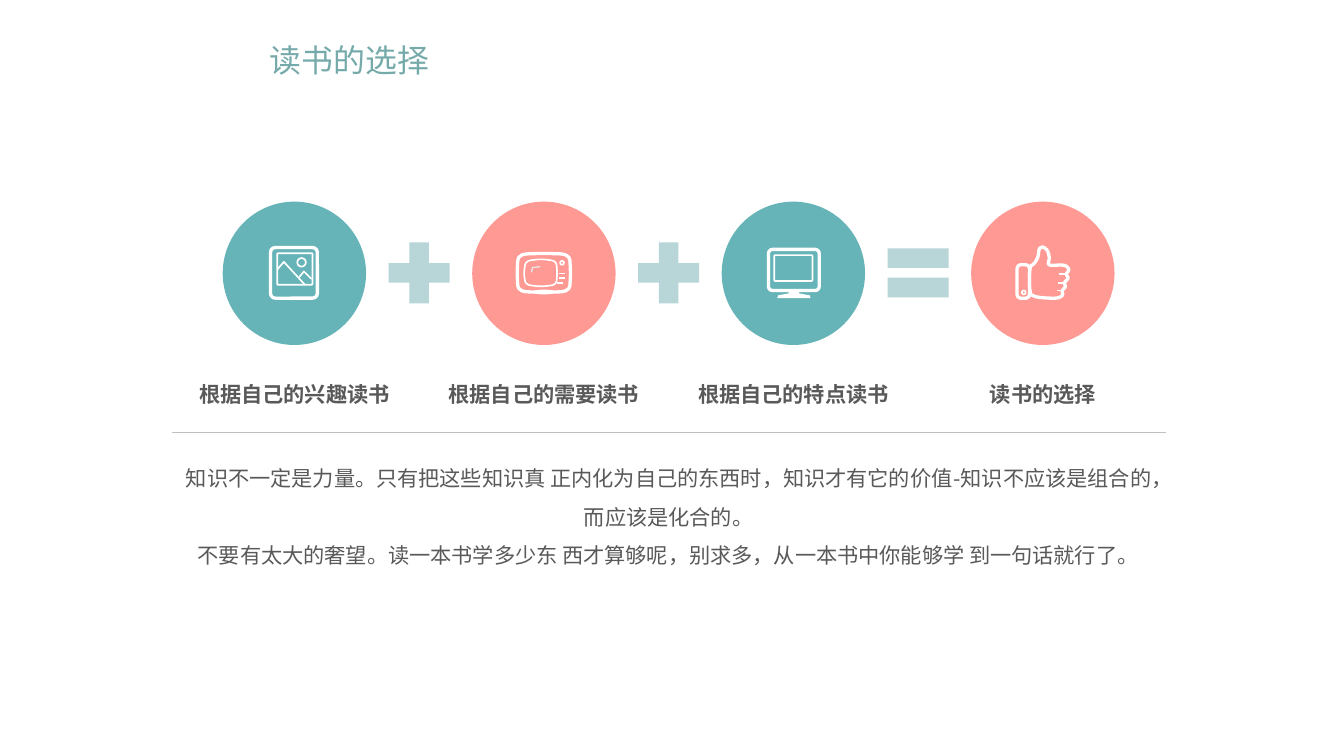
from pptx import Presentation
from pptx.dml.color import RGBColor
from pptx.enum import shapes as sh, text as tx
from pptx.oxml.ns import qn
from pptx.util import Inches, Pt
from lxml import etree

FONT = "Noto Sans CJK SC"
COLORS = {"title": "76AAAA", "teal": "66B4B8", "coral": "FF9993",
          "operator": "B8D6D8", "icon": "FFFFFF", "glint": "E7E6E6",
          "text": "595959", "rule": "BFBFBF"}
PITCH, FIRST_CENTER, CENTER_Y, CIRCLE = 2.61, 3.08, 2.86, 1.5
BOLD_STROKE, FINE_STROKE = 2.5, 1.25

TV_BODY = [(-.27, -.2), (0, -.21), (.27, -.2), (.28, 0),
           (.27, .19), (0, .2), (-.27, .19), (-.28, 0)]
TV_SCREEN = [(-.19, -.13), (-.03, -.15), (.13, -.13), (.14, 0),
             (.13, .12), (-.03, .14), (-.19, .12), (-.21, 0)]
MONITOR_STAND = [(-.05, .18), (.06, .18), (.06, .21), (.17, .23),
                 (.18, .26), (-.17, .26), (-.16, .23), (-.05, .21)]
HAND = [(-.14, -.07), (-.09, -.1), (-.05, -.17), (-.04, -.26), (0, -.28),
        (.05, -.24), (.07, -.16), (.05, -.08), (.23, -.09), (.28, -.04),
        (.24, .01), (.27, .05), (.22, .1), (.24, .14), (.2, .18),
        (.21, .23), (.16, .26), (.05, .26), (-.06, .25), (-.14, .22)]


def rgb(name):
    return RGBColor.from_string(COLORS[name])


def paint(shape, fill=None, stroke=None, weight=FINE_STROKE):
    shape.shadow.inherit = False
    if fill:
        shape.fill.solid()
        shape.fill.fore_color.rgb = rgb(fill)
    else:
        shape.fill.background()
    if stroke:
        shape.line.color.rgb = rgb(stroke)
        shape.line.width = Pt(weight)
    else:
        shape.line.fill.background()
    return shape


def add_preset(slide, kind, left, top, width, height, **style):
    shape = slide.shapes.add_shape(
        kind, Inches(left), Inches(top), Inches(width), Inches(height))
    return paint(shape, **style)


def add_frame(slide, left, top, width, height, radius, weight):
    frame = add_preset(slide, sh.MSO_SHAPE.ROUNDED_RECTANGLE, left, top, width,
                       height, stroke="icon", weight=weight)
    frame.adjustments[0] = radius / min(width, height)


def add_outline(slide, center, offsets, closed=True, **style):
    points = [(Inches(center + x), Inches(CENTER_Y + y)) for x, y in offsets]
    builder = slide.shapes.build_freeform(*points[0], scale=1.0)
    builder.add_line_segments(points[1:], close=closed)
    paint(builder.convert_to_shape(), **style)


def soften(points, rounds=2):
    """Cut the corners of a closed outline until it reads as a curve."""
    for _ in range(rounds):
        points = [(a[0] + (b[0] - a[0]) * t, a[1] + (b[1] - a[1]) * t)
                  for a, b in zip(points, points[1:] + points[:1])
                  for t in (.2, .8)]
    return points


def add_line(slide, x1, y1, x2, y2, color, weight):
    line = slide.shapes.add_connector(
        sh.MSO_CONNECTOR.STRAIGHT, Inches(x1), Inches(y1), Inches(x2), Inches(y2))
    line.line.color.rgb = rgb(color)
    line.line.width = Pt(weight)
    etree.SubElement(line._element.spPr, qn("a:effectLst"))


def add_run(paragraph, content, size, color, bold=False):
    run = paragraph.add_run()
    run.text = content
    run.font.size, run.font.bold, run.font.name = Pt(size), bold, FONT
    run.font.color.rgb = rgb(color)
    east_asian = etree.SubElement(run._r.get_or_add_rPr(), qn("a:ea"))
    east_asian.set("typeface", FONT)


def add_text(slide, left, top, width, height, paragraphs, spacing, bold=False):
    frame = slide.shapes.add_textbox(
        Inches(left), Inches(top), Inches(width), Inches(height)).text_frame
    frame.word_wrap = True
    frame.margin_left = frame.margin_right = frame.margin_top = frame.margin_bottom = 0
    for index, content in enumerate(paragraphs):
        paragraph = frame.add_paragraph() if index else frame.paragraphs[0]
        paragraph.alignment = tx.PP_ALIGN.CENTER
        paragraph.line_spacing = spacing
        add_run(paragraph, content, 16, "text", bold)


def set_title(slide, content):
    title = slide.shapes.title
    title.left, title.top = Inches(2.72), Inches(.37)
    title.width, title.height = Inches(2.47), Inches(.52)
    frame = title.text_frame
    frame.word_wrap = True
    frame.auto_size = tx.MSO_AUTO_SIZE.NONE
    frame.vertical_anchor = tx.MSO_ANCHOR.MIDDLE
    frame.paragraphs[0].alignment = tx.PP_ALIGN.JUSTIFY
    add_run(frame.paragraphs[0], content, 24, "title")


# Icons, each placed around the centre of its circle
def draw_photo(slide, center):
    add_frame(slide, center - .25, CENTER_Y - .27, .49, .53, .05, BOLD_STROKE)
    add_frame(slide, center - .18, CENTER_Y - .21, .37, .33, .01, FINE_STROKE)
    add_preset(slide, sh.MSO_SHAPE.OVAL, center + .03, CENTER_Y - .16, .09, .09,
               stroke="icon")
    for ridge in ([(-.18, -.04), (-.11, -.12), (.11, .12)],
                  [(.05, .04), (.1, -.02), (.18, .06)]):
        add_outline(slide, center, ridge, closed=False, stroke="icon")


def draw_television(slide, center):
    add_outline(slide, center, soften(TV_BODY), stroke="icon", weight=BOLD_STROKE)
    add_outline(slide, center, soften(TV_SCREEN), stroke="icon")
    add_preset(slide, sh.MSO_SHAPE.OVAL, center - .12, CENTER_Y + .17, .24, .05,
               fill="icon")
    add_preset(slide, sh.MSO_SHAPE.OVAL, center + .17, CENTER_Y - .13, .04, .04,
               stroke="icon")
    for x, y in ((.16, 0), (.16, .05), (.14, .1)):
        add_line(slide, center + x, CENTER_Y + y, center + x + .06, CENTER_Y + y,
                 "icon", FINE_STROKE)
    add_outline(slide, center, [(-.04, -.07), (-.12, -.06), (-.13, -.01)],
                closed=False, stroke="glint", weight=1)


def draw_monitor(slide, center):
    add_frame(slide, center - .26, CENTER_Y - .25, .53, .43, .04, BOLD_STROKE)
    add_frame(slide, center - .2, CENTER_Y - .19, .4, .27, .01, FINE_STROKE)
    add_outline(slide, center, MONITOR_STAND, fill="icon")


def draw_thumb(slide, center):
    add_frame(slide, center - .27, CENTER_Y - .09, .13, .35, .04, BOLD_STROKE)
    add_preset(slide, sh.MSO_SHAPE.OVAL, center - .22, CENTER_Y + .18, .04, .04,
               stroke="icon")
    add_outline(slide, center, soften(HAND), stroke="icon", weight=BOLD_STROKE)
    for x, y in ((.17, .01), (.16, .1), (.15, .18)):
        add_line(slide, center + x, CENTER_Y + y, center + x + .07, CENTER_Y + y,
                 "icon", FINE_STROKE)


def main():
    prs = Presentation()
    prs.slide_width, prs.slide_height = Inches(14.06), Inches(7.91)
    slide = prs.slides.add_slide(prs.slide_layouts[5])
    set_title(slide, "读书的选择")

    # Equation: circle, icon, label and the operator that follows
    plus, equal = sh.MSO_SHAPE.MATH_PLUS, sh.MSO_SHAPE.MATH_EQUAL
    terms = [("根据自己的兴趣读书", "teal", draw_photo, plus),
             ("根据自己的需要读书", "coral", draw_television, plus),
             ("根据自己的特点读书", "teal", draw_monitor, equal),
             ("读书的选择", "coral", draw_thumb, None)]
    for index, (label, color, draw_icon, operator) in enumerate(terms):
        center = FIRST_CENTER + PITCH * index
        add_preset(slide, sh.MSO_SHAPE.OVAL, center - CIRCLE / 2,
                   CENTER_Y - CIRCLE / 2, CIRCLE, CIRCLE, fill=color)
        draw_icon(slide, center)
        if operator:
            add_preset(slide, operator, center + .87, CENTER_Y - .44, .87, .87,
                       fill="operator")
        add_text(slide, center - 1.11, 3.94, 2.22, .28, [label], 1.2, bold=True)

    # Explanation under the rule
    add_line(slide, 1.8, 4.52, 12.2, 4.52, "rule", .5)
    add_text(slide, 1.84, 4.74, 10.31, 1.16, [
        "知识不一定是力量。只有把这些知识真 正内化为自己的东西时，知识才有它的价值-知识不应该是组合的，而应该是化合的。",
        "不要有太大的奢望。读一本书学多少东 西才算够呢，别求多，从一本书中你能够学 到一句话就行了。",
    ], 1.5)
    prs.save("out.pptx")


if __name__ == "__main__":
    main()
